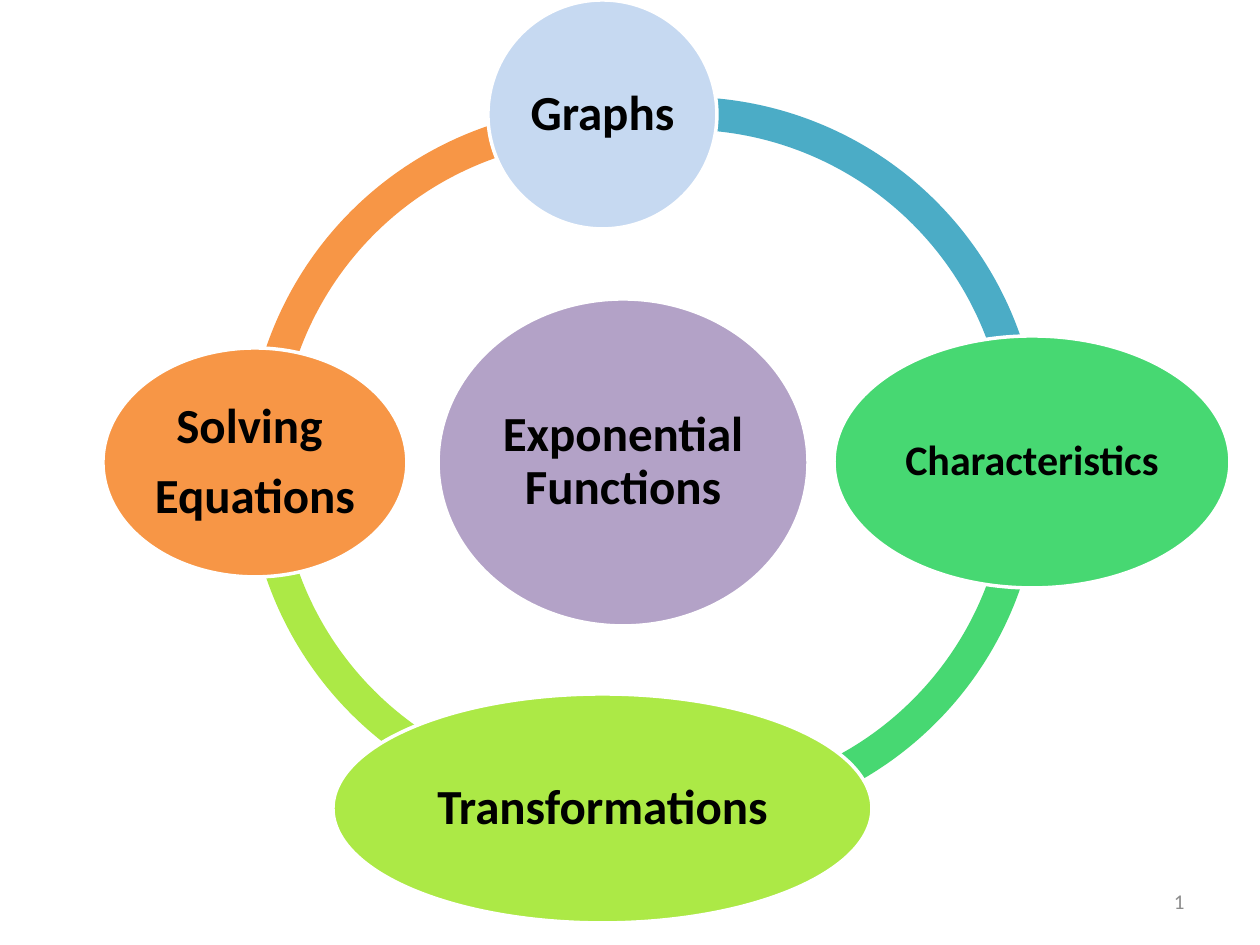
import dataclasses

import pptx
import pptx.dml.color
import pptx.enum.shapes
import pptx.enum.text
import pptx.util

SCALE = 914400 / 126
SHAPE = pptx.enum.shapes.MSO_SHAPE
ALIGN = pptx.enum.text.PP_ALIGN
RING_SIZE = 711
RING_THICKNESS = 0.046


@dataclasses.dataclass(frozen=True)
class Theme:
    font: str = "Calibri"
    text: str = "000000"
    muted: str = "8C8C8C"
    outline: str = "FFFFFF"
    purple: str = "B3A2C7"
    pale_blue: str = "C6D9F1"
    green: str = "47D872"
    lime: str = "ACE946"
    orange: str = "F79646"
    teal: str = "4BACC6"
    topic_size: int = 28
    compact_size: int = 24
    number_size: int = 12
    outline_width: int = 2


THEME = Theme()


def px(n):
    return pptx.util.Emu(round(n * SCALE))


def rgb(value):
    return pptx.dml.color.RGBColor.from_string(value)


def style_paragraph(p, size, color, align, bold=False):
    p.alignment = align
    p.font.name = THEME.font
    p.font.size = pptx.util.Pt(size)
    p.font.bold = bold
    p.font.color.rgb = rgb(color)


def add_filled(s, kind, box, fill):
    sp = s.shapes.add_shape(kind, *map(px, box))
    sp.shadow.inherit = False
    sp.fill.solid()
    sp.fill.fore_color.rgb = rgb(fill)
    return sp


def add_arc(s, left, top, start, end, fill):
    sp = add_filled(s, SHAPE.BLOCK_ARC, (left, top, RING_SIZE, RING_SIZE), fill)
    sp.line.fill.background()
    for i, value in enumerate((start, end, RING_THICKNESS)):
        sp.adjustments[i] = value


def add_topic(s, box, fill, text, size=THEME.topic_size):
    sp = add_filled(s, SHAPE.OVAL, box, fill)
    sp.line.color.rgb = rgb(THEME.outline)
    sp.line.width = pptx.util.Pt(THEME.outline_width)
    tf = sp.text_frame
    tf.word_wrap = True
    tf.vertical_anchor = pptx.enum.text.MSO_ANCHOR.MIDDLE
    tf.margin_left = tf.margin_top = tf.margin_right = tf.margin_bottom = px(5)
    tf.text = text
    for p in tf.paragraphs:
        style_paragraph(p, size, THEME.text, ALIGN.CENTER, bold=True)
        p.line_spacing = 0.9
        p.space_after = pptx.util.Pt(round(size * 0.35))


def add_slide_number(s, box, text):
    tf = s.shapes.add_textbox(*map(px, box)).text_frame
    tf.word_wrap = True
    tf.vertical_anchor = pptx.enum.text.MSO_ANCHOR.MIDDLE
    tf.text = text
    style_paragraph(tf.paragraphs[0], THEME.number_size, THEME.muted, ALIGN.RIGHT)


def main():
    prs = pptx.Presentation()
    prs.slide_width, prs.slide_height = px(1260), px(945)
    s = prs.slides.add_slide(prs.slide_layouts[6])

    add_arc(s, 247, 107, 108, 162, THEME.orange)
    add_arc(s, 247, 107, 54, 108, THEME.lime)
    add_arc(s, 329, 116, 215.01, 62.28, THEME.green)
    add_arc(s, 329, 97, 153.72, 0.99, THEME.teal)

    add_topic(s, (438, 299, 370, 327), THEME.purple, "Exponential Functions")
    add_topic(s, (488, 0, 229, 229), THEME.pale_blue, "Graphs")
    add_topic(s, (834, 336, 396, 252), THEME.green, "Characteristics",
              THEME.compact_size)
    add_topic(s, (333, 694, 539, 229), THEME.lime, "Transformations")
    add_topic(s, (103, 348, 304, 229), THEME.orange, "Solving \nEquations")

    add_slide_number(s, (903, 876, 294, 50), "1")
    prs.save("out.pptx")


if __name__ == "__main__":
    main()
